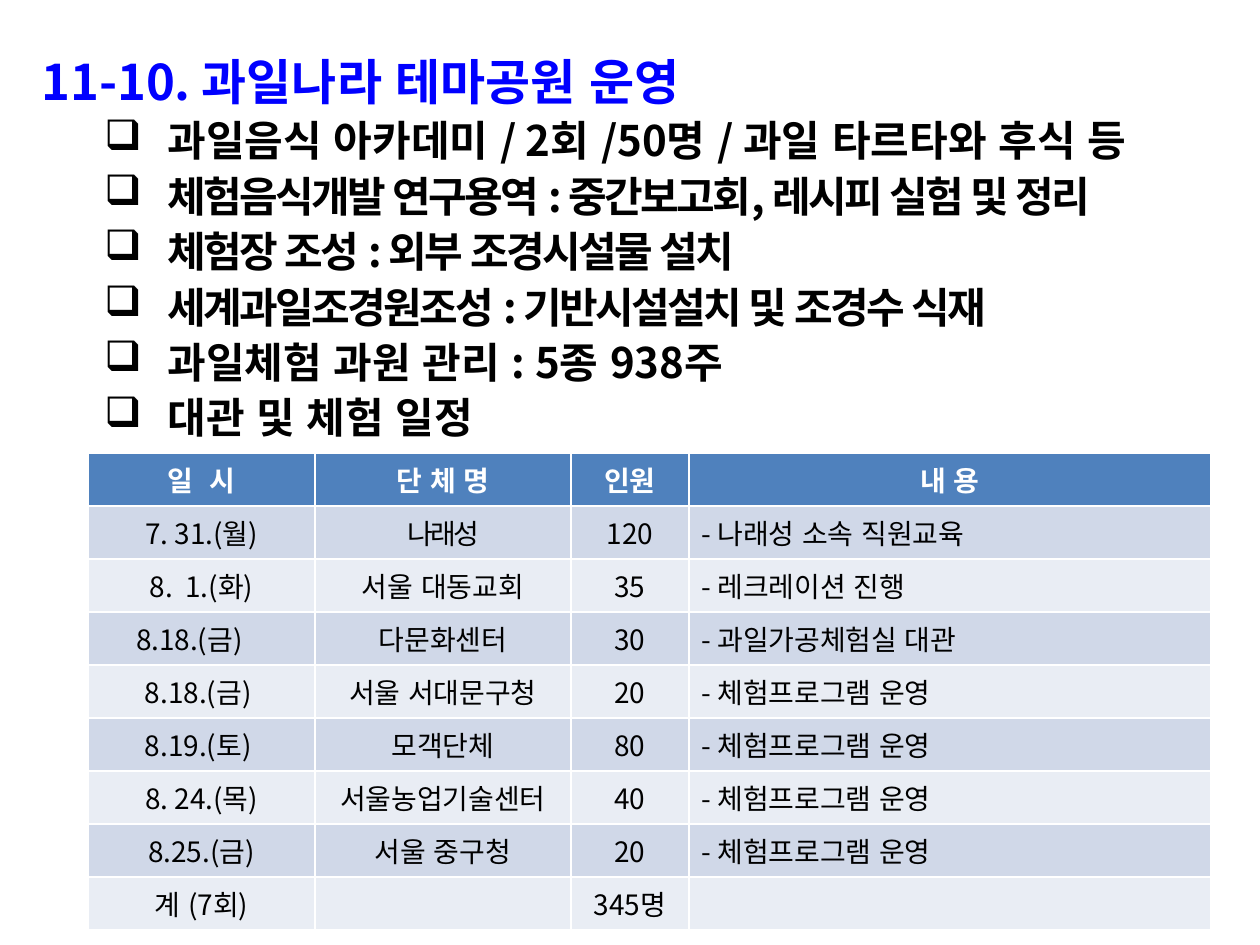
from dataclasses import dataclass

from lxml import etree
from pptx import Presentation
from pptx.dml.color import RGBColor
from pptx.enum.lang import MSO_LANGUAGE_ID
from pptx.enum.text import MSO_ANCHOR, PP_ALIGN
from pptx.oxml.ns import qn
from pptx.util import Pt

EMU_PER_PX = 914400 // 126
CENTER, LEFT = PP_ALIGN.CENTER, PP_ALIGN.LEFT
MIDDLE = MSO_ANCHOR.MIDDLE
KOREAN = MSO_LANGUAGE_ID.KOREAN


@dataclass(frozen=True)
class Theme:
    font: str = "Noto Sans CJK KR"
    bullet_font: str = "Wingdings"
    bullet: str = "q"  # hollow square in the bullet font
    title_color: str = "0000FF"
    text_color: str = "000000"
    header_text: str = "FFFFFF"
    header_fill: str = "4F81BD"
    bands: tuple = ("D0D8E8", "E9EDF4")
    title_size: int = 28
    bullet_size: int = 24
    table_size: int = 16
    line_spacing: float = 1.1
    tight: int = -150  # hundredths of a point


THEME = Theme()

TITLE = "11-10. 과일나라 테마공원 운영"
# text, tight letter spacing
BULLETS = [
    ("과일음식 아카데미 / 2회 /50명 / 과일 타르타와 후식 등", False),
    ("체험음식개발 연구용역 : 중간보고회, 레시피 실험 및 정리", True),
    ("체험장 조성 : 외부 조경시설물 설치", True),
    ("세계과일조경원조성 : 기반시설설치 및 조경수 식재", True),
    ("과일체험 과원 관리 : 5종 938주", False),
    ("대관 및 체험 일정", False),
]
PROGRAM = "- 체험프로그램 운영"
SCHEDULE = [
    ("일  시", "단 체 명", "인원", "내 용"),
    ("7. 31.(월)", "나래성", "120", "- 나래성 소속 직원교육"),
    ("8.  1.(화)", "서울 대동교회", "35", "- 레크레이션 진행"),
    ("8.18.(금)", "다문화센터", "30", "- 과일가공체험실 대관"),
    ("8.18.(금)", "서울 서대문구청", "20", PROGRAM),
    ("8.19.(토)", "모객단체", "80", PROGRAM),
    ("8. 24.(목)", "서울농업기술센터", "40", PROGRAM),
    ("8.25.(금)", "서울 중구청", "20", PROGRAM),
    ("계 (7회)", "", "345명", ""),
]
COLUMN_WIDTHS = (227, 256, 118, 522)
ROW_HEIGHT = 53
DATE_RIGHT_MARGINS = {3: 37, 4: 19, 5: 19}
TIGHT_CELL = (1, 1)


def px(length):
    return length * EMU_PER_PX


def style_runs(paragraph, size, color, bold, spacing=0):
    for run in paragraph.runs:
        run.font.size = Pt(size)
        run.font.bold = bold
        run.font.name = THEME.font
        run.font.language_id = KOREAN
        run.font.color.rgb = RGBColor.from_string(color)
        properties = run.font._element
        latin = properties.find(qn("a:latin"))
        east_asian = etree.Element(qn("a:ea"), typeface=THEME.font)
        latin.addnext(east_asian)
        if spacing:
            properties.set("spc", str(spacing))


def set_indent(paragraph, margin, hanging):
    properties = paragraph._p.get_or_add_pPr()
    properties.set("marL", str(px(margin)))
    properties.set("indent", str(-px(hanging)))
    return properties


def add_bullet(paragraph, text, tight):
    paragraph.text = text
    paragraph.level = 1
    paragraph.line_spacing = THEME.line_spacing
    properties = set_indent(paragraph, 126, 63)
    color = etree.SubElement(properties, qn("a:buClr"))
    etree.SubElement(color, qn("a:srgbClr"), val=THEME.text_color)
    etree.SubElement(properties, qn("a:buFont"), typeface=THEME.bullet_font,
                     charset="2")
    etree.SubElement(properties, qn("a:buChar"), char=THEME.bullet)
    style_runs(paragraph, THEME.bullet_size, THEME.text_color, True,
               THEME.tight if tight else 0)


def add_outline(slide):
    box = slide.shapes.add_textbox(px(29), px(39), px(1191), px(867))
    text_frame = box.text_frame
    text_frame.word_wrap = True
    text_frame.text = TITLE
    title = text_frame.paragraphs[0]
    title.line_spacing = THEME.line_spacing
    set_indent(title, 73, 73)
    style_runs(title, THEME.title_size, THEME.title_color, True)
    for text, tight in BULLETS:
        add_bullet(text_frame.add_paragraph(), text, tight)


def fill_cell(cell, text, row, column):
    header = row == 0
    cell.fill.solid()
    fill = THEME.header_fill if header else THEME.bands[(row - 1) % 2]
    cell.fill.fore_color.rgb = RGBColor.from_string(fill)
    cell.vertical_anchor = MIDDLE
    cell.text_frame.text = text
    paragraph = cell.text_frame.paragraphs[0]
    description = column == len(COLUMN_WIDTHS) - 1 and not header
    paragraph.alignment = LEFT if description else CENTER
    if description and row > 1:
        set_indent(paragraph, 48, 48)
    style_runs(paragraph, THEME.table_size,
               THEME.header_text if header else THEME.text_color, header,
               THEME.tight if (row, column) == TIGHT_CELL else 0)


def add_schedule(slide):
    frame = slide.shapes.add_table(
        len(SCHEDULE), len(COLUMN_WIDTHS), px(88), px(453),
        px(sum(COLUMN_WIDTHS)), px(ROW_HEIGHT * len(SCHEDULE)))
    table = frame.table
    for column, width in zip(table.columns, COLUMN_WIDTHS):
        column.width = px(width)
    for row, texts in enumerate(SCHEDULE):
        for column, text in enumerate(texts):
            fill_cell(table.cell(row, column), text, row, column)
    for row, margin in DATE_RIGHT_MARGINS.items():
        table.cell(row, 0).margin_right = px(margin)


def main():
    presentation = Presentation()
    presentation.slide_width = px(1260)
    presentation.slide_height = px(945)
    slide = presentation.slides.add_slide(presentation.slide_layouts[6])
    add_outline(slide)
    add_schedule(slide)
    presentation.save("out.pptx")


if __name__ == "__main__":
    main()
